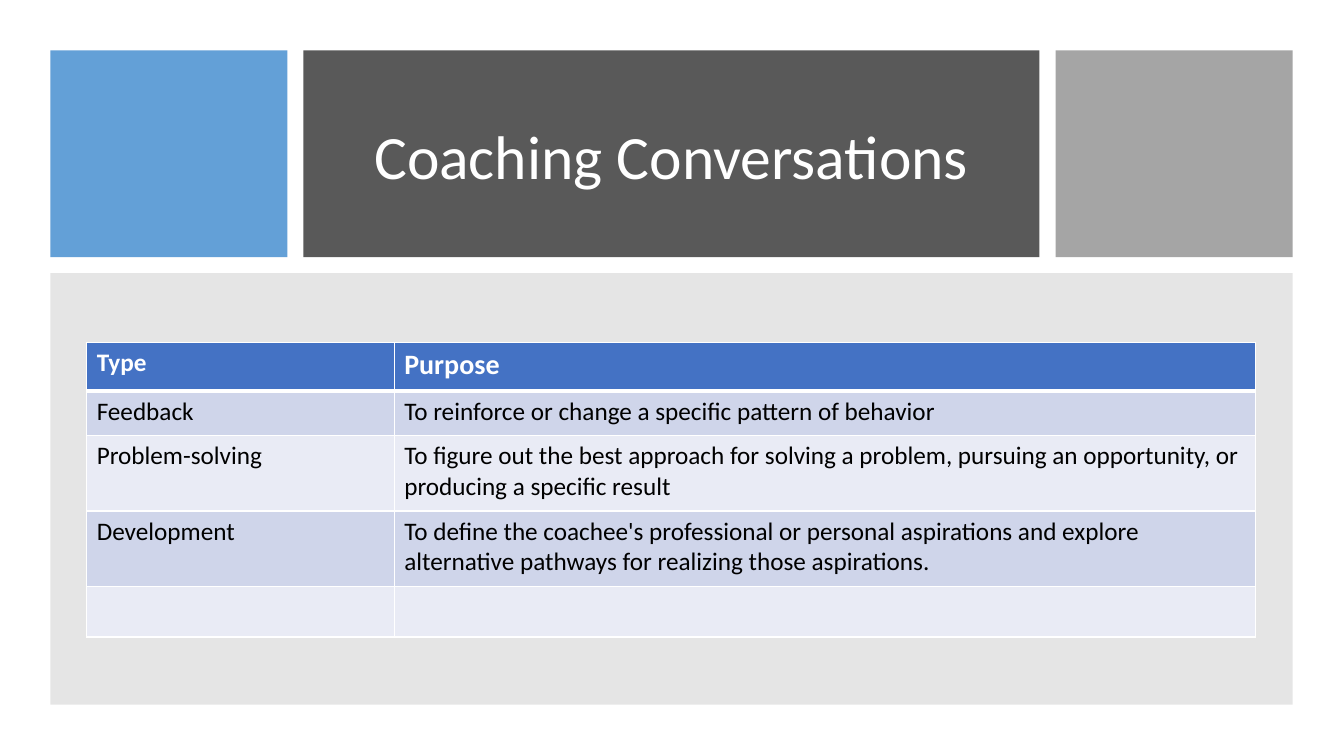
import pptx
import pptx.dml.color
import pptx.enum.shapes
import pptx.enum.text
import pptx.oxml
import pptx.util
from pptx.util import Inches

FONT = "Calibri"
WHITE, BLACK = "FFFFFF", "000000"
HEADER_FILL, BAND_FILLS = "4472C4", ("CFD5EA", "E9EBF5")
A_NS = "http://schemas.openxmlformats.org/drawingml/2006/main"
COLUMN_WIDTHS = (3.05, 8.54)
ROW_HEIGHTS = (0.48, 0.44, 0.75, 0.75, 0.5)
CONVERSATIONS = (
    ("Type", "Purpose"),
    ("Feedback", "To reinforce or change a specific pattern of behavior"),
    ("Problem-solving", "To figure out the best approach for solving a problem, "
     "pursuing an opportunity, or producing a specific result"),
    ("Development", "To define the coachee's professional or personal aspirations "
     "and explore alternative pathways for realizing those aspirations."),
    ("", ""),
)


def rgb(color):
    """Return the colour object for a hex string."""
    return pptx.dml.color.RGBColor.from_string(color)


def add_run(p, text, size, color, bold=False):
    """Append a formatted run to a paragraph."""
    r = p.add_run()
    r.text = text
    r.font.name, r.font.size, r.font.bold = FONT, pptx.util.Pt(size), bold
    r.font.color.rgb = rgb(color)


def add_panel(s, left, top, width, height, color, opacity=100):
    """Add a plain filled rectangle, optionally see-through."""
    sp = s.shapes.add_shape(pptx.enum.shapes.MSO_SHAPE.RECTANGLE, Inches(left),
                            Inches(top), Inches(width), Inches(height))
    sp.shadow.inherit = False
    sp.fill.solid()
    sp.fill.fore_color.rgb = rgb(color)
    sp.line.fill.background()
    if opacity < 100:
        srgb = sp.fill._xPr.find(f".//{{{A_NS}}}srgbClr")
        srgb.append(pptx.oxml.parse_xml(
            f'<a:alpha xmlns:a="{A_NS}" val="{opacity * 1000}"/>'))
    return sp


def add_header(s, left, top, width, height, title):
    """Place the title panel between two side panels."""
    side, gap = 2.35, 0.16
    middle = width - 2 * (side + gap)
    add_panel(s, left, top, side, height, "5B9BD5", 95)
    panel = add_panel(s, left + side + gap, top, middle, height, "595959")
    add_panel(s, left + width - side, top, side, height, "A5A5A5")

    sp = s.shapes.title
    panel._element.addnext(sp._element)
    sp.left, sp.top = Inches(left + side + gap + 0.32), Inches(top + 0.3)
    sp.width, sp.height = Inches(middle - 0.64), Inches(1.56)
    tf = sp.text_frame
    tf.word_wrap = True
    tf.vertical_anchor = pptx.enum.text.MSO_ANCHOR.MIDDLE
    p = tf.paragraphs[0]
    p.alignment = pptx.enum.text.PP_ALIGN.CENTER
    p.line_spacing = 0.9
    add_run(p, title, 44, WHITE)


def set_borders(cell, top, bottom):
    """Draw white borders round a cell, with top and bottom widths in points."""
    tc_pr = cell._tc.get_or_add_tcPr()
    for side, width in (("L", 1), ("R", 1), ("T", top), ("B", bottom)):
        tc_pr.append(pptx.oxml.parse_xml(
            f'<a:ln{side} xmlns:a="{A_NS}" w="{pptx.util.Pt(width)}"><a:solidFill>'
            f'<a:srgbClr val="{WHITE}"/></a:solidFill></a:ln{side}>'))


def add_conversation_table(s, left, top):
    """Add the banded table of conversation types and purposes."""
    table = s.shapes.add_table(
        len(ROW_HEIGHTS), len(COLUMN_WIDTHS), Inches(left), Inches(top),
        Inches(sum(COLUMN_WIDTHS)), Inches(sum(ROW_HEIGHTS))).table
    for column, width in zip(table.columns, COLUMN_WIDTHS):
        column.width = Inches(width)
    for i, (height, texts) in enumerate(zip(ROW_HEIGHTS, CONVERSATIONS)):
        table.rows[i].height = Inches(height)
        header = i == 0
        for j, text in enumerate(texts):
            cell = table.cell(i, j)
            set_borders(cell, 3 if i == 1 else 1, 3 if header else 1)
            cell.fill.solid()
            cell.fill.fore_color.rgb = rgb(
                HEADER_FILL if header else BAND_FILLS[(i - 1) % 2])
            if text:
                add_run(cell.text_frame.paragraphs[0], text,
                        20 if header and j == 1 else 18,
                        WHITE if header else BLACK, header)


def add_body(s, left, top, width, height):
    """Place the grey panel and the table inside it."""
    add_panel(s, left, top, width, height, "808080", 20)
    add_conversation_table(s, left + 0.36, top + 0.69)


def main():
    """Build and save the slide."""
    prs = pptx.Presentation()
    prs.slide_width, prs.slide_height = Inches(13.33), Inches(7.5)
    s = prs.slides.add_slide(prs.slide_layouts[5])
    add_header(s, 0.5, 0.5, 12.32, 2.05, "Coaching Conversations")
    add_body(s, 0.5, 2.71, 12.32, 4.28)
    prs.save("out.pptx")


if __name__ == "__main__":
    main()
